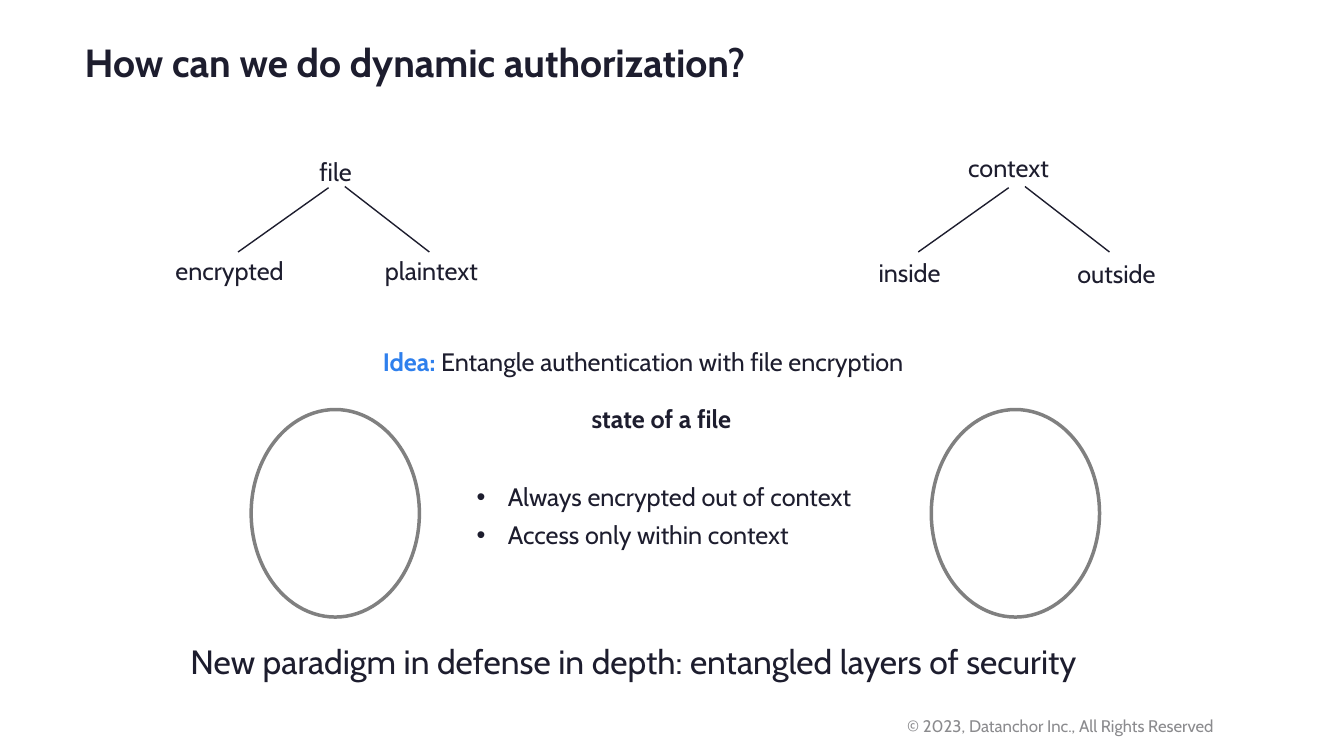
from dataclasses import dataclass

from lxml import etree
from pptx import Presentation
from pptx.dml.color import RGBColor as Rgb
from pptx.enum.shapes import MSO_CONNECTOR as Connector, MSO_SHAPE as Shape
from pptx.enum.text import MSO_ANCHOR as Anchor, PP_ALIGN as Align
from pptx.oxml.ns import qn
from pptx.util import Cm, Pt


@dataclass(frozen=True)
class Theme:
    font: str = "Cabin"
    ink: Rgb = Rgb(0x1D, 0x1D, 0x2E)
    accent: Rgb = Rgb(0x2F, 0x80, 0xED)
    ring: Rgb = Rgb(0x80, 0x80, 0x80)
    muted: Rgb = Rgb(0x8B, 0x8B, 0x8E)
    title: int = 28
    closing: int = 24
    body: int = 18
    footer: int = 12


THEME = Theme()
LABEL_HEIGHT = 1.02


def style(font, size=THEME.body, color=THEME.ink, bold=False):
    font.name, font.size, font.bold = THEME.font, Pt(size), bold
    font.color.rgb = color


def prepare(shape):
    frame = shape.text_frame
    frame.word_wrap = True
    frame.vertical_anchor = Anchor.TOP
    return frame


def add_label(page, text, left, top, width, height=LABEL_HEIGHT, **look):
    box = page.shapes.add_textbox(Cm(left), Cm(top), Cm(width), Cm(height))
    para = prepare(box).paragraphs[0]
    para.text = text
    style(para.font, **look)


def add_branch(page, start, end):
    line = page.shapes.add_connector(
        Connector.STRAIGHT, *(Cm(length) for length in (*start, *end)))
    line.line.color.rgb = THEME.ink
    line.line.width = Pt(1)
    etree.SubElement(line._element.spPr, qn("a:effectLst"))


def add_title(page, text, left, top, width, height):
    title = page.shapes.title
    title.left, title.top = Cm(left), Cm(top)
    title.width, title.height = Cm(width), Cm(height)
    para = prepare(title).paragraphs[0]
    para.text = text
    para.alignment = Align.LEFT
    para.line_spacing = 1.0
    style(para.font, size=THEME.title, bold=True)


def add_tree(page, left, top, labels):
    """Root, two leaves and the ring below; labels hold text, x, y, width."""
    for text, x, y, width in labels:
        add_label(page, text, left + x, top + y, width)
    for start, end in (((4.11, 1.02), (1.83, 2.64)),
                       ((4.52, 0.99), (6.65, 2.64))):
        add_branch(page, (left + start[0], top + start[1]),
                   (left + end[0], top + end[1]))
    ring = page.shapes.add_shape(
        Shape.OVAL, Cm(left + 2.16), Cm(top + 6.61), Cm(4.24), Cm(5.23))
    ring.shadow.inherit = False
    ring.fill.background()
    ring.line.color.rgb = THEME.ring
    ring.line.width = Pt(2.5)


def add_idea(page, left, top, width):
    box = page.shapes.add_textbox(Cm(left), Cm(top), Cm(width), Cm(LABEL_HEIGHT))
    para = prepare(box).paragraphs[0]
    for text, look in (("Idea:", {"color": THEME.accent, "bold": True}),
                       (" Entangle authentication with file encryption", {})):
        span = para.add_run()
        span.text = text
        style(span.font, **look)


def add_bullets(page, items, left, top, width, height):
    box = page.shapes.add_textbox(Cm(left), Cm(top), Cm(width), Cm(height))
    frame = prepare(box)
    for index, item in enumerate(items):
        para = frame.add_paragraph() if index else frame.paragraphs[0]
        para.text = item
        if index:
            para.space_before = Pt(5.5)
        settings = para._p.get_or_add_pPr()
        settings.set("marL", str(Cm(0.79)))
        settings.set("indent", str(-Cm(0.79)))
        etree.SubElement(settings, qn("a:buFont"), typeface="Arial")
        etree.SubElement(settings, qn("a:buChar"), char="•")
        style(para.font)


def main():
    deck = Presentation()
    deck.slide_width, deck.slide_height = Cm(33.87), Cm(19.05)
    page = deck.slides.add_slide(deck.slide_layouts[5])

    # Title
    add_title(page, "How can we do dynamic authorization?", 1.88, 0.84, 19.4, 1.45)

    # File and context trees
    add_tree(page, 4.17, 3.71, (("file", 3.63, 0.1, 1.4),
                                ("encrypted", 0, 2.59, 3.6),
                                ("plaintext", 5.28, 2.59, 3.1)))
    add_tree(page, 21.31, 3.71, (("context", 2.84, 0, 2.8),
                                 ("inside", 0.58, 2.64, 2.26),
                                 ("outside", 5.59, 2.67, 2.74)))

    # Idea and file states
    add_idea(page, 9.4, 8.61, 15.06)
    add_label(page, "state of a file", 14.66, 10.03, 4.55, bold=True)
    add_bullets(page, ("Always encrypted out of context",
                       "Access only within context"), 11.76, 12.01, 11.05, 1.98)

    # Closing line and footer
    add_label(page, "New paradigm in defense in depth: entangled layers of security",
              4.55, 16.03, 25.48, 1.27, size=THEME.closing)
    add_label(page, "© 2023, Datanchor Inc.,\u00a0All Rights Reserved".replace("\u00a0", " "),
              22.61, 17.91, 8.89, 0.76, size=THEME.footer, color=THEME.muted)

    deck.save("out.pptx")


if __name__ == "__main__":
    main()
